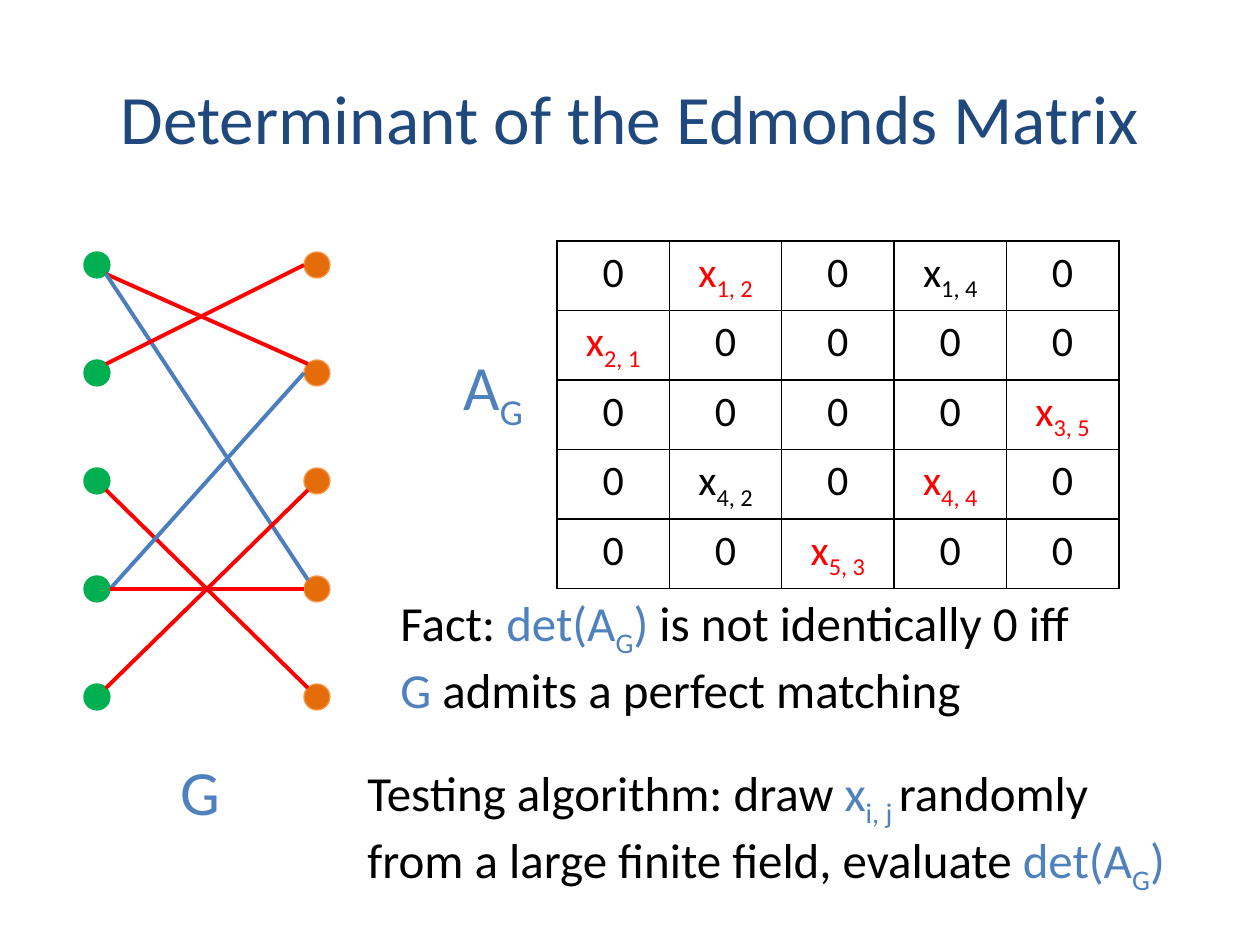
from lxml.etree import SubElement
from pptx import Presentation
from pptx.dml.color import RGBColor
from pptx.enum.shapes import MSO_CONNECTOR as Connector, MSO_SHAPE as Shape
from pptx.enum.text import MSO_ANCHOR as Anchor, PP_ALIGN as Align
from pptx.oxml.ns import qn
from pptx.util import Emu, Pt

THEME = {
    "font": "Calibri",
    "title": RGBColor(0x1F, 0x49, 0x7D),
    "text": RGBColor(0, 0, 0),
    "accent": RGBColor(0x4F, 0x81, 0xBD),
    "edge": RGBColor(0x4B, 0x7E, 0xBC),
    "matching": RGBColor(0xFF, 0, 0),
    "left": RGBColor(0, 0xB0, 0x50),
    "right": RGBColor(0xE4, 0x6C, 0x0A),
    "right line": RGBColor(0xF7, 0x96, 0x46),
    "title size": 39.6,
    "label size": 36,
    "body size": 28,
    "cell size": 24,
}
SCALE = 914400 / 126


def px(*lengths):
    return [Emu(round(length * SCALE)) for length in lengths]


def write(paragraph, size, parts):
    """Each part is (text, colour name) or (text, colour name, "sub"); None breaks the line."""
    for part in parts:
        if part is None:
            paragraph.add_line_break()
            continue
        text, colour, *subscript = part
        run = paragraph.add_run()
        run.text = text
        run.font.name = THEME["font"]
        run.font.size = Pt(THEME[size])
        run.font.color.rgb = THEME[colour]
        if subscript:
            run.font._element.set("baseline", "-25000")


presentation = Presentation()
presentation.slide_width, presentation.slide_height = px(1260, 945)
slide = presentation.slides.add_slide(presentation.slide_layouts[6])

# Vertices of the bipartite graph
COUNT = 5
LEFT_X, RIGHT_X, TOP_Y, STEP = 97, 317, 265, 108
RADIUS, DIAGONAL = 13, 9
for x, fill, line in ((LEFT_X, "left", "left"), (RIGHT_X, "right", "right line")):
    for row in range(COUNT):
        y = TOP_Y + row * STEP
        vertex = slide.shapes.add_shape(
            Shape.OVAL, *px(x - RADIUS, y - RADIUS, 2 * RADIUS, 2 * RADIUS))
        vertex.shadow.inherit = False
        vertex.fill.solid()
        vertex.fill.fore_color.rgb = THEME[fill]
        vertex.line.color.rgb = THEME[line]
        vertex.line.width = Pt(0.75)

# Edges: left vertex, right vertex, colour, side of each dot touched (-1 top, 1 bottom)
EDGES = [
    (1, 2, "matching", 1, -1),
    (1, 4, "edge", 1, -1),
    (2, 1, "matching", -1, 0),
    (3, 5, "matching", 1, -1),
    (4, 2, "edge", 0, 0),
    (4, 4, "matching", 0, 0),
    (5, 3, "matching", -1, 1),
]
for left, right, colour, start, end in EDGES:
    edge = slide.shapes.add_connector(Connector.STRAIGHT, *px(
        LEFT_X + (DIAGONAL if start else RADIUS),
        TOP_Y + (left - 1) * STEP + start * DIAGONAL,
        RIGHT_X - (DIAGONAL if end else RADIUS),
        TOP_Y + (right - 1) * STEP + end * DIAGONAL))
    edge.line.color.rgb = THEME[colour]
    edge.line.width = Pt(2.25)
    SubElement(edge._element.spPr, qn("a:effectLst"))

# Edmonds matrix: a variable for each edge, zero elsewhere
variables = {(left, right): "matching" if colour == "matching" else "text"
             for left, right, colour, *_ in EDGES}
table = slide.shapes.add_table(COUNT, COUNT, *px(557, 241, 562, 291)).table
table.first_row = table.horz_banding = False
for index in range(COUNT):
    table.columns[index].width, table.rows[index].height = px(112.4, 57 if index else 63)
for row in range(1, COUNT + 1):
    for column in range(1, COUNT + 1):
        cell = table.cell(row - 1, column - 1)
        properties = cell._tc.get_or_add_tcPr()
        for side in ("a:lnL", "a:lnR", "a:lnT", "a:lnB"):
            border = SubElement(properties, qn(side), w=str(Pt(1)))
            fill = SubElement(border, qn("a:solidFill"))
            SubElement(fill, qn("a:srgbClr"), val=str(THEME["text"]))
        cell.fill.background()
        colour = variables.get((row, column))
        parts = [("x", colour), (f"{row}, {column}", colour, "sub")] if colour else [("0", "text")]
        paragraph = cell.text_frame.paragraphs[0]
        paragraph.alignment = Align.CENTER
        write(paragraph, "cell size", parts)

# Title, labels and statements
DETERMINANT = [("det(A", "accent"), ("G", "accent", "sub"), (")", "accent")]
TEXTS = [
    ((63, 38, 1134, 157), "title size", Align.CENTER, Anchor.MIDDLE,
     [("Determinant of the Edmonds Matrix", "title")]),
    ((388, 586, 840, 131), "body size", Align.LEFT, Anchor.TOP,
     [("Fact: ", "text"), *DETERMINANT, (" is not identically 0 iff ", "text"), None,
      ("G", "accent"), (" admits a perfect matching", "text")]),
    ((451, 341, 111, 89), "label size", Align.LEFT, Anchor.TOP,
     [("A", "accent"), ("G", "accent", "sub")]),
    ((168, 746, 111, 89), "label size", Align.LEFT, Anchor.TOP, [("G", "accent")]),
    ((355, 756, 840, 131), "body size", Align.LEFT, Anchor.TOP,
     [("Testing algorithm: draw ", "text"), ("x", "accent"), ("i, j ", "accent", "sub"),
      ("randomly from a large finite field, evaluate ", "text"), *DETERMINANT]),
]
for box, size, alignment, anchor, parts in TEXTS:
    text_frame = slide.shapes.add_textbox(*px(*box)).text_frame
    text_frame.word_wrap = True
    text_frame.vertical_anchor = anchor
    paragraph = text_frame.paragraphs[0]
    paragraph.alignment = alignment
    write(paragraph, size, parts)

presentation.save("out.pptx")
